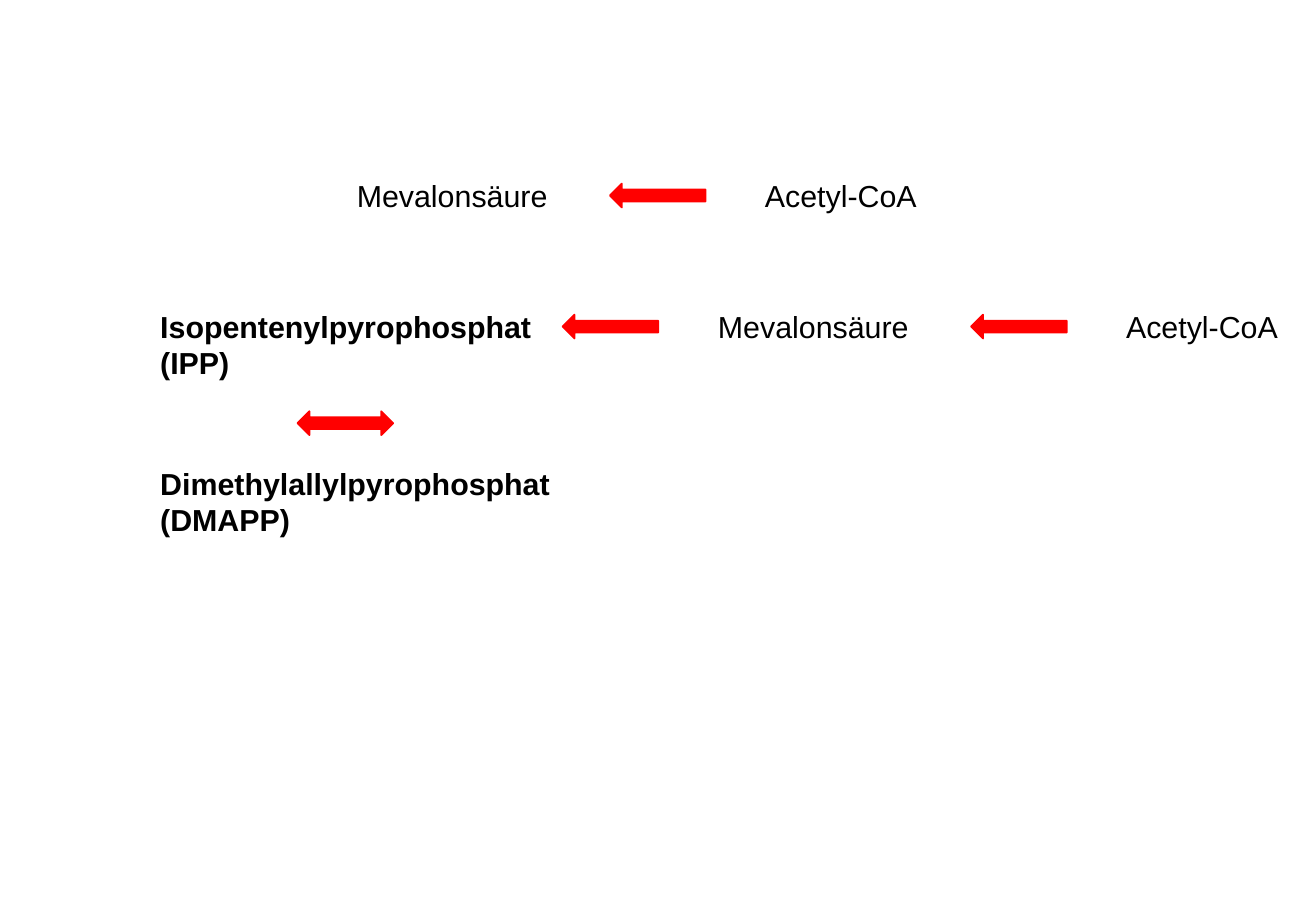
import pptx
import pptx.dml.color
import pptx.enum.shapes
import pptx.enum.text
import pptx.util

Cm = pptx.util.Cm
Pt = pptx.util.Pt
ARROWS = pptx.enum.shapes.MSO_SHAPE

COLORS = {"text": "000000", "arrow": "FF0000"}
FONT = {"name": "Arial", "size": Pt(18)}
FRAME = {
    "word_wrap": False,
    "auto_size": pptx.enum.text.MSO_AUTO_SIZE.SHAPE_TO_FIT_TEXT,
}


def rgb(key):
    return pptx.dml.color.RGBColor.from_string(COLORS[key])


def apply_format(target, values):
    for attribute, value in values.items():
        setattr(target, attribute, value)


def add_compound(slide, left, top, width, lines, bold=False):
    height = 0.22 + 0.79 * len(lines)
    compound = slide.shapes.add_textbox(Cm(left), Cm(top), Cm(width), Cm(height))
    frame = compound.text_frame
    apply_format(frame, FRAME)
    for index, line in enumerate(lines):
        paragraph = frame.paragraphs[0] if index == 0 else frame.add_paragraph()
        run = paragraph.add_run()
        run.text = line
        apply_format(run.font, {**FONT, "bold": bold})
        run.font.color.rgb = rgb("text")


def add_reaction(slide, left, top, kind=ARROWS.LEFT_ARROW):
    reaction = slide.shapes.add_shape(kind, Cm(left), Cm(top), Cm(2), Cm(0.5))
    reaction.shadow.inherit = False
    reaction.fill.solid()
    reaction.fill.fore_color.rgb = rgb("arrow")
    reaction.line.color.rgb = rgb("arrow")
    reaction.line.width = Pt(1)


def add_mevalonate_pathway(slide, left, top):
    add_compound(slide, left, top, 4.55, ["Mevalonsäure"])
    add_reaction(slide, left + 5.54, top + 0.26)
    add_compound(slide, left + 8.53, top, 3.71, ["Acetyl-CoA"])


def add_isoprene_units(slide, left, top):
    add_compound(slide, left, top, 8.36, ["Isopentenylpyrophosphat", "(IPP)"], bold=True)
    add_reaction(slide, left + 8.66, top + 0.26)
    add_reaction(slide, left + 3.12, top + 2.28, ARROWS.LEFT_RIGHT_ARROW)
    add_compound(
        slide, left, top + 3.28, 8.74, ["Dimethylallylpyrophosphat", "(DMAPP)"], bold=True
    )


def main():
    presentation = pptx.Presentation()
    presentation.slide_width = Cm(27.51)
    presentation.slide_height = Cm(19.05)
    slide = presentation.slides.add_slide(presentation.slide_layouts[6])
    add_mevalonate_pathway(slide, 7.21, 3.58)
    add_isoprene_units(slide, 3.1, 6.32)
    add_mevalonate_pathway(slide, 14.76, 6.32)
    presentation.save("out.pptx")


if __name__ == "__main__":
    main()
